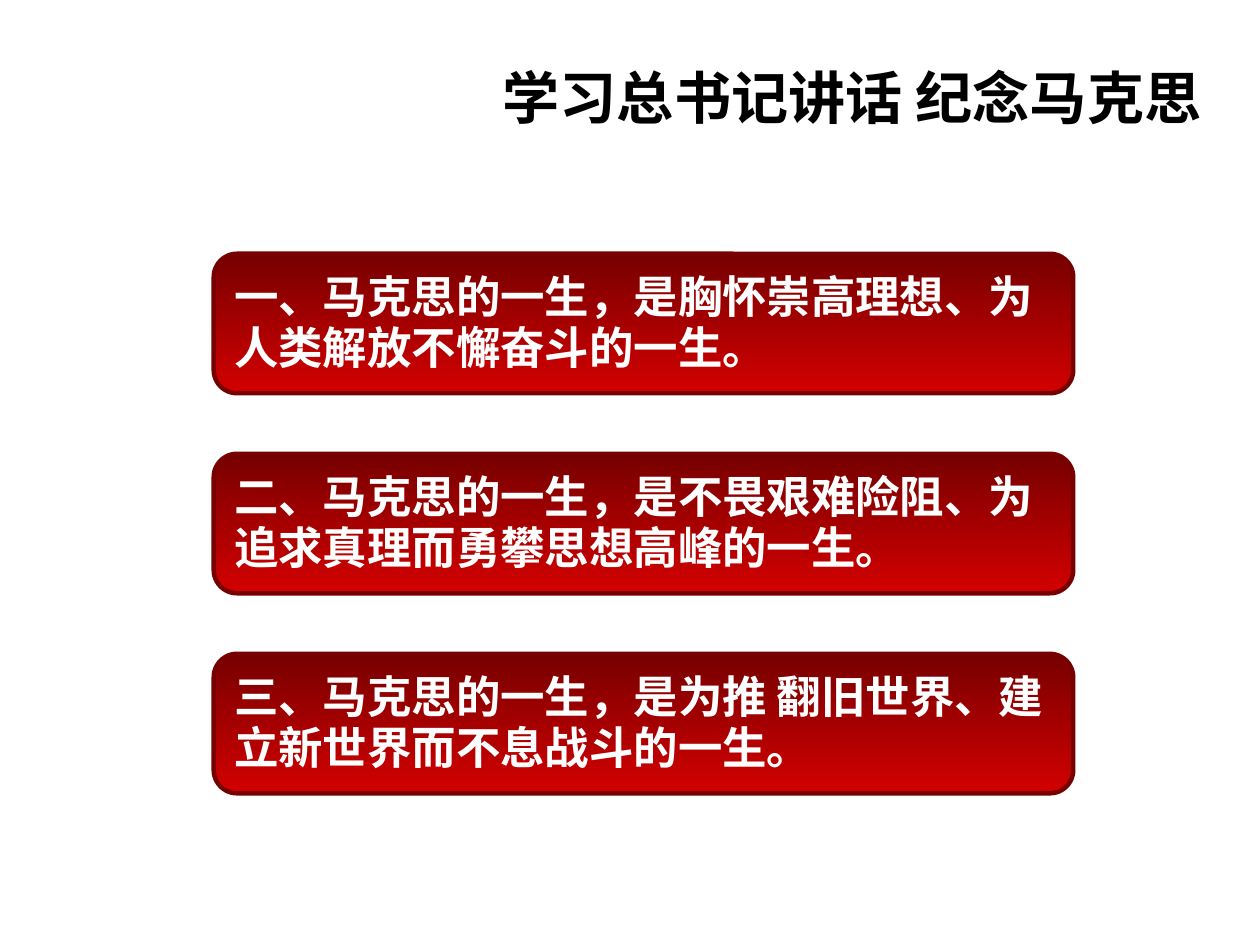
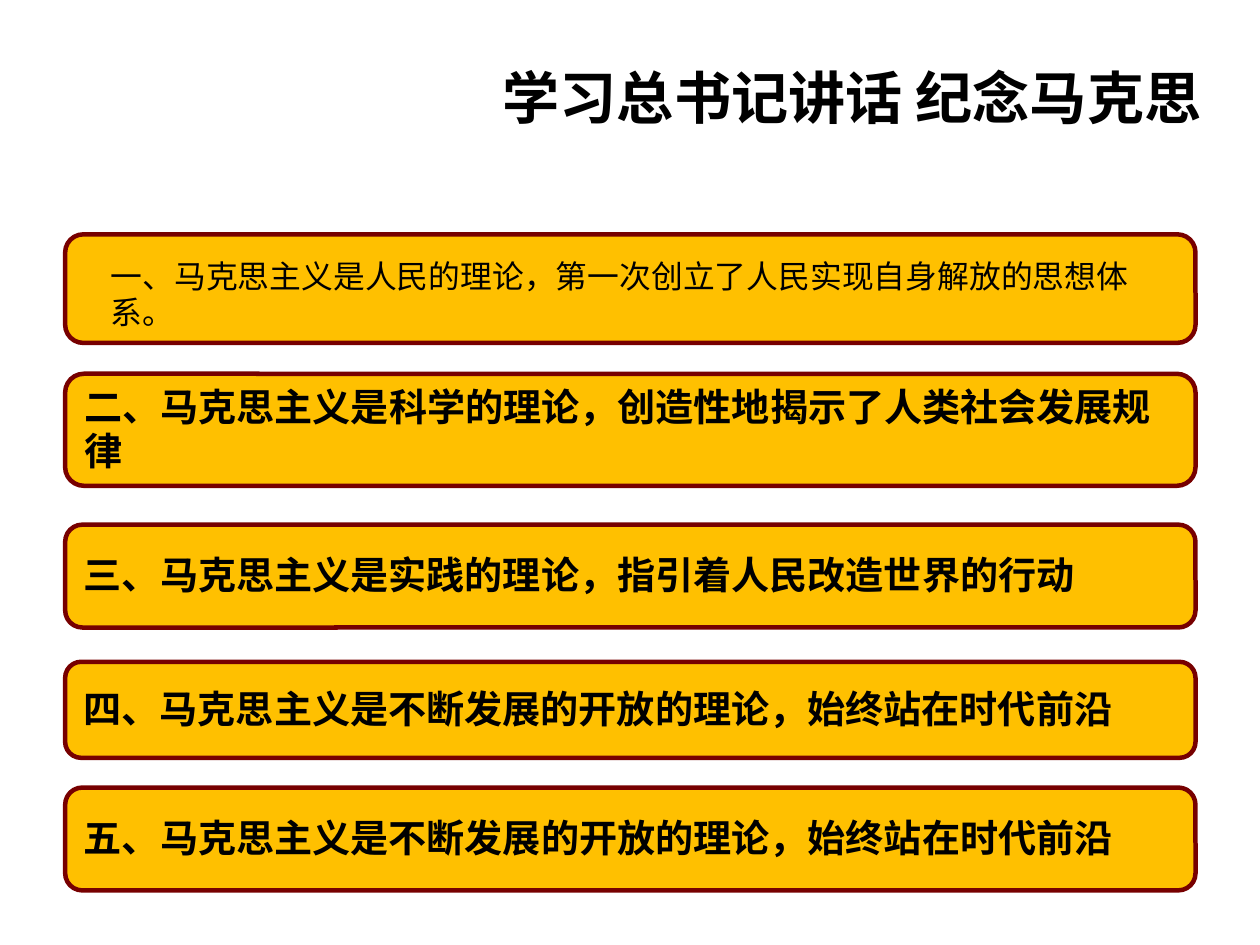
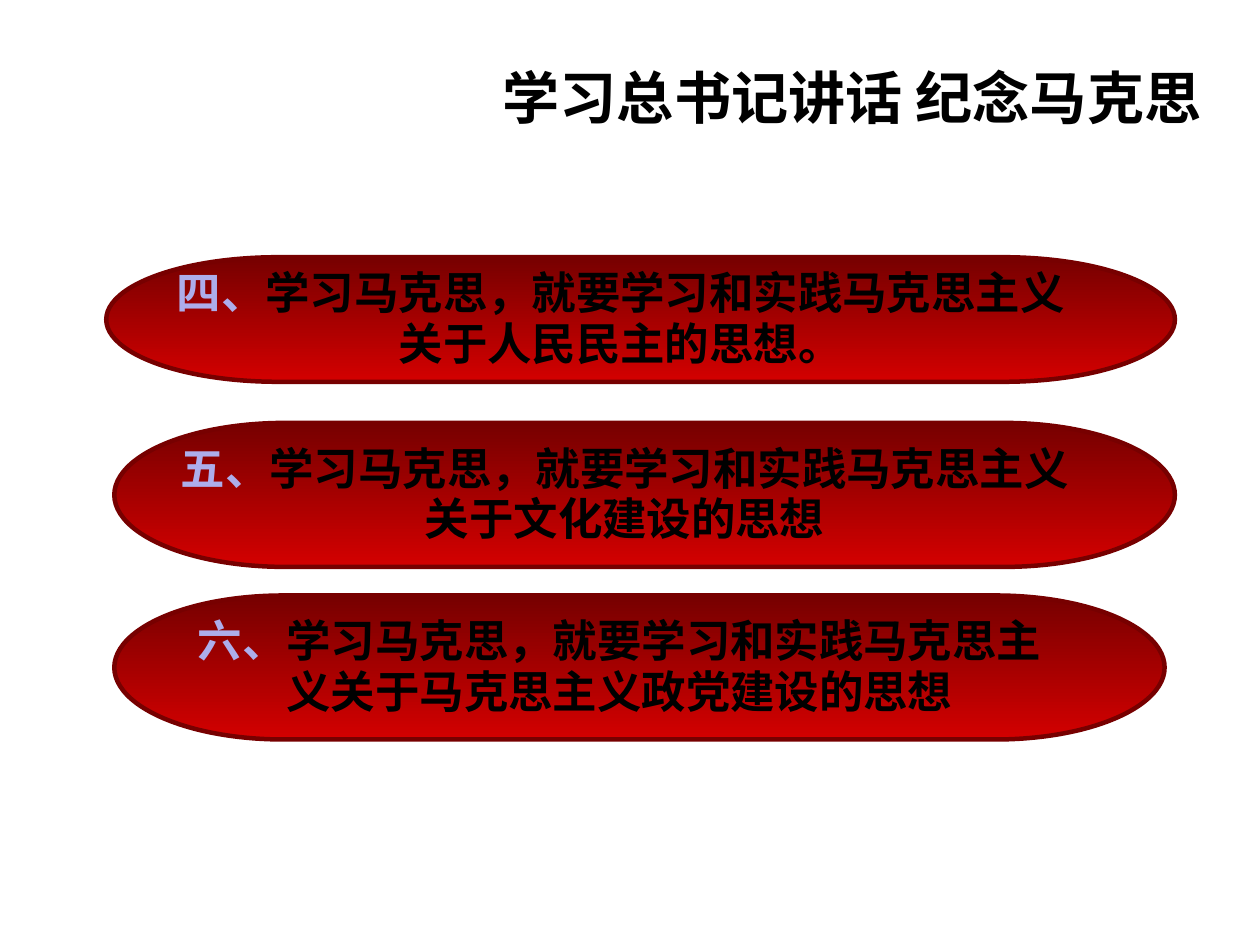
from dataclasses import dataclass

from lxml import etree
from pptx import Presentation
from pptx.dml.color import RGBColor
from pptx.enum.shapes import MSO_SHAPE
from pptx.enum.text import MSO_ANCHOR, MSO_AUTO_SIZE, PP_ALIGN
from pptx.oxml.ns import qn
from pptx.shapes.autoshape import Shape
from pptx.slide import Slide
from pptx.util import Emu, Inches, Pt

ROUNDED = MSO_SHAPE.ROUNDED_RECTANGLE
TERMINATOR = MSO_SHAPE.FLOWCHART_TERMINATOR
TOP, MIDDLE = MSO_ANCHOR.TOP, MSO_ANCHOR.MIDDLE
LEFT, CENTER, RIGHT = PP_ALIGN.LEFT, PP_ALIGN.CENTER, PP_ALIGN.RIGHT
GROW, FIXED = MSO_AUTO_SIZE.SHAPE_TO_FIT_TEXT, MSO_AUTO_SIZE.NONE

SLIDE_WIDTH = Emu(10080625)
SLIDE_HEIGHT = Emu(7559675)

DARK_RED = RGBColor(0x77, 0x00, 0x00)
BRIGHT_RED = RGBColor(0xD3, 0x00, 0x00)
GOLD = RGBColor(0xFF, 0xC0, 0x00)
WHITE = RGBColor(0xFF, 0xFF, 0xFF)
BLACK = RGBColor(0x00, 0x00, 0x00)
LAVENDER = RGBColor(0xAD, 0xAD, 0xEB)
INDIGO = RGBColor(0x33, 0x33, 0xCC)

LATIN_FONT = "Arial"
CJK_FONT = "Noto Sans CJK SC"
TITLE = "学习总书记讲话 纪念马克思"
TEXT_INSETS = (0.1, 0.05, 0.1, 0.05)
CARD_INSETS = (0.12, 0.08, 0.12, 0.07)
PILL_INSETS = (0.12, 0.08, 0.47, 0.07)


@dataclass(frozen=True)
class Box:
    left: float
    top: float
    width: float
    height: float


@dataclass(frozen=True)
class Span:
    text: str
    color: RGBColor
    outline: RGBColor | None = None


@dataclass(frozen=True)
class Bar:
    top: float
    height: float
    sentence: str = ""


@dataclass(frozen=True)
class Pill:
    box: Box
    number: str
    lesson: str


LIFE_CARDS = [
    "一、马克思的一生，是胸怀崇高理想、为人类解放不懈奋斗的一生。",
    "二、马克思的一生，是不畏艰难险阻、为追求真理而勇攀思想高峰的一生。",
    "三、马克思的一生，是为推 翻旧世界、建立新世界而不息战斗的一生。",
]
FIRST_THEORY = "一、马克思主义是人民的理论，第一次创立了人民实现自身解放的思想体系。"
FIRST_BAR = Bar(2.05, 0.95)
THEORY_BARS = [
    Bar(3.27, 0.98, "二、马克思主义是科学的理论，创造性地揭示了人类社会发展规律"),
    Bar(4.59, 0.9, "三、马克思主义是实践的理论，指引着人民改造世界的行动"),
    Bar(5.79, 0.84, "四、马克思主义是不断发展的开放的理论，始终站在时代前沿"),
    Bar(6.89, 0.9, "五、马克思主义是不断发展的开放的理论，始终站在时代前沿"),
]
LESSON_PILLS = [
    Pill(Box(0.93, 2.25, 9.35, 1.09), "四、",
         "学习马克思，就要学习和实践马克思主义关于人民民主的思想。"),
    Pill(Box(1, 3.7, 9.28, 1.26), "五、",
         "学习马克思，就要学习和实践马克思主义关于文化建设的思想"),
    Pill(Box(1, 5.21, 9.19, 1.26), "六、",
         "学习马克思，就要学习和实践马克思主义关于马克思主义政党建设的思想"),
]


def write_text(shape: Shape, *spans: Span, size: float, bold: bool = True,
               font: str = CJK_FONT, align: PP_ALIGN = LEFT,
               anchor: MSO_ANCHOR = MIDDLE, spacing: float = 0.95,
               insets: tuple[float, float, float, float] = CARD_INSETS,
               auto_size: MSO_AUTO_SIZE = FIXED) -> None:
    frame = shape.text_frame
    frame.word_wrap = True
    frame.auto_size = auto_size
    frame.vertical_anchor = anchor
    (frame.margin_left, frame.margin_top,
     frame.margin_right, frame.margin_bottom) = map(Inches, insets)
    paragraph = frame.paragraphs[0]
    paragraph.alignment = align
    paragraph.line_spacing = spacing
    for span in spans:
        run = paragraph.add_run()
        run.text = span.text
        run.font.size = Pt(size)
        run.font.bold = bold
        run.font.color.rgb = span.color
        run.font.name = font
        properties = run.font._element
        etree.SubElement(properties, qn("a:ea")).set("typeface", CJK_FONT)
        if span.outline is not None:
            line = etree.Element(qn("a:ln"), w=str(Pt(1.75)))
            fill = etree.SubElement(line, qn("a:solidFill"))
            etree.SubElement(fill, qn("a:srgbClr")).set("val", str(span.outline))
            properties.insert(0, line)


def add_panel(slide: Slide, kind: MSO_SHAPE, box: Box,
              fill: RGBColor | None = None) -> Shape:
    panel = slide.shapes.add_shape(kind, Inches(box.left), Inches(box.top),
                                   Inches(box.width), Inches(box.height))
    panel.shadow.inherit = False
    panel.line.color.rgb = DARK_RED
    panel.line.width = Pt(2.83)
    if fill is None:
        panel.fill.gradient()
        panel.fill.gradient_angle = 270
        for stop, color, position in zip(panel.fill.gradient_stops,
                                         (DARK_RED, BRIGHT_RED), (0, 1)):
            stop.color.rgb = color
            stop.position = position
    else:
        panel.fill.solid()
        panel.fill.fore_color.rgb = fill
    return panel


def add_bar(slide: Slide, bar: Bar) -> Shape:
    return add_panel(slide, ROUNDED, Box(0.57, bar.top, 9.89, bar.height), GOLD)


def add_label(slide: Slide, box: Box, text: str, *, size: float, bold: bool,
              align: PP_ALIGN = LEFT, spacing: float = 0.95) -> None:
    label = slide.shapes.add_textbox(Inches(box.left), Inches(box.top),
                                     Inches(box.width), Inches(box.height))
    write_text(label, Span(text, BLACK), size=size, bold=bold, font=LATIN_FONT,
               align=align, anchor=TOP, spacing=spacing, insets=TEXT_INSETS,
               auto_size=GROW)


def add_title(slide: Slide) -> None:
    add_label(slide, Box(3.85, 0.54, 6.76, 0.67), TITLE, size=36, bold=True,
              align=RIGHT)


def fill_life_slide(slide: Slide) -> None:
    for index, sentence in enumerate(LIFE_CARDS):
        card = add_panel(slide, ROUNDED, Box(1.87, 2.22 + 1.75 * index, 7.52, 1.22))
        write_text(card, Span(sentence, WHITE), size=28)


def fill_theory_slide(slide: Slide) -> None:
    add_bar(slide, FIRST_BAR)
    add_label(slide, Box(0.87, 2.23, 9.29, 0.72), FIRST_THEORY, size=20,
              bold=False, spacing=0.93)
    for bar in THEORY_BARS:
        write_text(add_bar(slide, bar), Span(bar.sentence, BLACK), size=24)


def fill_lesson_slide(slide: Slide) -> None:
    for pill in LESSON_PILLS:
        panel = add_panel(slide, TERMINATOR, pill.box)
        write_text(panel, Span(pill.number, LAVENDER, INDIGO),
                   Span(pill.lesson, BLACK), size=28, align=CENTER,
                   insets=PILL_INSETS)


def main() -> None:
    deck = Presentation()
    deck.slide_width = SLIDE_WIDTH
    deck.slide_height = SLIDE_HEIGHT
    for fill_slide in (fill_life_slide, fill_theory_slide, fill_lesson_slide):
        slide = deck.slides.add_slide(deck.slide_layouts[6])
        fill_slide(slide)
        add_title(slide)
    deck.save("out.pptx")


if __name__ == "__main__":
    main()
